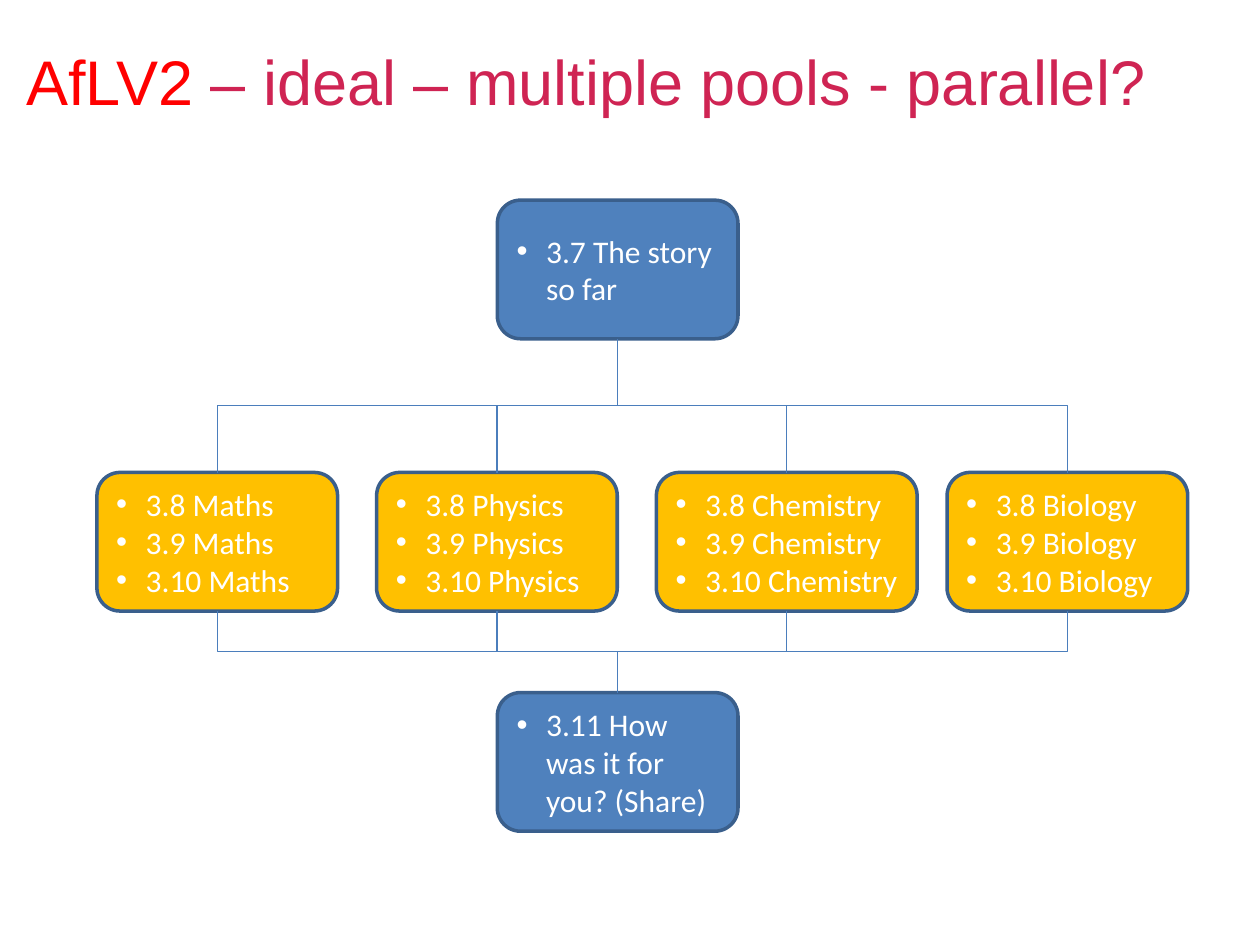
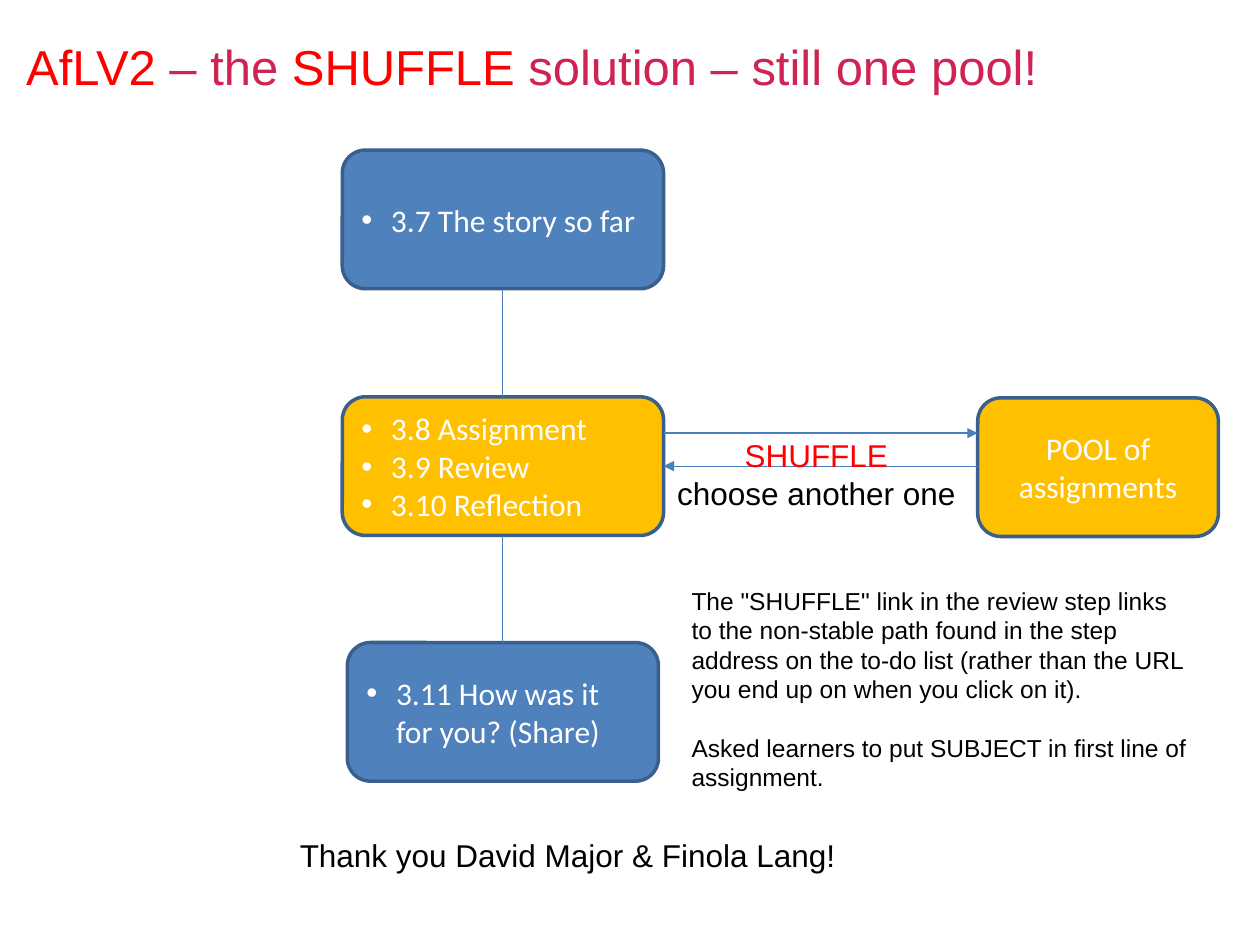
from dataclasses import dataclass
from typing import NamedTuple

from pptx import Presentation
from pptx.dml.color import RGBColor
from pptx.enum.shapes import MSO_CONNECTOR, MSO_SHAPE
from pptx.enum.text import MSO_ANCHOR, PP_ALIGN
from pptx.oxml.ns import qn
from pptx.util import Pt
from lxml.etree import SubElement


# Theme
@dataclass(frozen=True)
class Theme:
    blue: str = "4F81BD"
    gold: str = "FFC000"
    edge: str = "3A5F8C"
    link: str = "4B7EBC"
    red: str = "FF0000"
    rose: str = "CF2453"
    white: str = "FFFFFF"
    black: str = "000000"
    sans: str = "Arial"
    card: str = "Calibri"
    body: int = 18
    note: int = 14
    indent: float = 16.9
    height: float = 79.2
    width: float = 137.5


THEME = Theme()
TOP, BOTTOM = 0, 2  # connection sites of a card


class Run(NamedTuple):
    text: str
    tint: str


class Card(NamedTuple):
    left: float
    top: float
    lines: list[str]
    fill: str
    width: float = THEME.width
    bullet: bool = True


class Label(NamedTuple):
    left: float
    top: float
    width: float
    height: float


def color(code: str) -> RGBColor:
    return RGBColor.from_string(code)


# Text
def write(frame, lines, *, size=THEME.body, font=THEME.sans, tint=THEME.black,
          align=PP_ALIGN.LEFT, bullet=False, gap=0, wrap=True,
          anchor=MSO_ANCHOR.TOP) -> None:
    """Each line is a string or a list of runs."""
    frame.word_wrap = wrap
    frame.vertical_anchor = anchor
    for pos, line in enumerate(lines):
        para = frame.paragraphs[0] if pos == 0 else frame.add_paragraph()
        para.alignment = align
        if pos and gap:
            para.space_before = Pt(gap)
        if bullet:
            props = para._p.get_or_add_pPr()
            props.set("marL", str(Pt(THEME.indent)))
            props.set("indent", str(-Pt(THEME.indent)))
            SubElement(props, qn("a:buFont")).set("typeface", THEME.sans)
            SubElement(props, qn("a:buChar")).set("char", "•")
        for part in [Run(line, tint)] if isinstance(line, str) else line:
            run = para.add_run()
            run.text = part.text
            run.font.size = Pt(size)
            run.font.name = font
            run.font.color.rgb = color(part.tint)


def add_label(slide, spot: Label, lines, **style):
    box = slide.shapes.add_textbox(*map(Pt, spot))
    write(box.text_frame, lines, **style)
    return box


def add_title(slide, spot: Label, runs: list[Run], size: int) -> None:
    box = add_label(slide, spot, [runs], size=size)
    box.text_frame.margin_top = Pt(7)


# Cards
def add_card(slide, card: Card):
    shape = slide.shapes.add_shape(
        MSO_SHAPE.ROUNDED_RECTANGLE, Pt(card.left), Pt(card.top),
        Pt(card.width), Pt(THEME.height))
    shape.shadow.inherit = False
    shape.fill.solid()
    shape.fill.fore_color.rgb = color(card.fill)
    shape.line.color.rgb = color(THEME.edge)
    shape.line.width = Pt(2)
    write(shape.text_frame, card.lines, font=THEME.card, tint=THEME.white,
          align=PP_ALIGN.LEFT if card.bullet else PP_ALIGN.CENTER,
          bullet=card.bullet, anchor=MSO_ANCHOR.MIDDLE)
    return shape


# Links
def add_link(slide, kind, *ends: int, arrow: bool = False):
    link = slide.shapes.add_connector(kind, *ends)
    link.line.color.rgb = color(THEME.link)
    link.line.width = Pt(0.75)
    if arrow:
        SubElement(link.line._get_or_add_ln(), qn("a:tailEnd")).set("type", "triangle")
    SubElement(link._element.spPr, qn("a:effectLst"))
    return link


def add_line(slide, *ends: float, arrow: bool = False) -> None:
    add_link(slide, MSO_CONNECTOR.STRAIGHT, *map(Pt, ends), arrow=arrow)


def add_elbow(slide, upper, lower) -> None:
    """Join two cards with a down, across, down path."""
    link = add_link(slide, MSO_CONNECTOR.ELBOW, 0, 0, 0, 0)
    link.begin_connect(upper, BOTTOM)
    link.end_connect(lower, TOP)
    start, stop = (card.left + card.width // 2 for card in (upper, lower))
    head, foot = upper.top + upper.height, lower.top
    # The path is drawn sideways, then turned about its centre
    link.width, link.height = foot - head, abs(stop - start)
    link.left = (start + stop - link.width) // 2
    link.top = (head + foot - link.height) // 2
    frame = link._element.spPr.find(qn("a:xfrm"))
    right = stop > start
    frame.set("rot", str((270 if right else 90) * 60000))
    frame.set("flipH", "1" if right else "0")
    frame.set("flipV", "0")


# Slide 1: parallel pools
def draw_pools(slide) -> None:
    add_title(slide, Label(7.9, 17.3, 671, 104.4), [
        Run("AfLV2", THEME.red),
        Run(" – ideal – multiple pools - parallel?", THEME.rose)], 36)
    pools = [
        add_card(slide, Card(left, 270, [f"3.{step} {topic}" for step in (8, 9, 10)],
                             THEME.gold, width))
        for topic, left, width in (
            ("Maths", 55.4, THEME.width), ("Physics", 215.2, THEME.width),
            ("Chemistry", 375.1, 149), ("Biology", 541.2, THEME.width))]
    first = add_card(slide, Card(284.2, 114.4, ["3.7 The story so far"], THEME.blue))
    last = add_card(slide, Card(284.2, 395.8, ["3.11 How was it for you? (Share)"],
                                THEME.blue))
    for pool in pools:
        add_elbow(slide, first, pool)
        add_elbow(slide, pool, last)


# Slide 2: one pool with shuffle
def draw_shuffle(slide) -> None:
    add_title(slide, Label(7.9, 13.7, 620.6, 104.4), [
        Run("AfLV2", THEME.red), Run(" – the ", THEME.rose),
        Run("SHUFFLE", THEME.red),
        Run(" solution – still one pool!", THEME.rose)], 28)
    for card in (
        Card(195.6, 226.8, ["3.8 Assignment", "3.9 Review", "3.10 Reflection"],
             THEME.gold, 183.6),
        Card(558.7, 227.4, ["POOL of", "assignments"], THEME.gold, bullet=False),
        Card(195.6, 85.8, ["3.7 The story so far"], THEME.blue, 183.6),
        Card(198.5, 367.2, ["3.11 How was it for you? (Share)"], THEME.blue, 177.8),
    ):
        add_card(slide, card)

    near, far, mid = 379.2, 558.7, 287.3
    add_line(slide, near, 247.5, far, 247.5, arrow=True)
    add_line(slide, far, 266.4, near, 266.4, arrow=True)
    add_line(slide, mid, 165, mid, 226.8)
    add_line(slide, mid, 306, mid, 367.2)

    add_label(slide, Label(379, 245.5, 175, 51),
              [[Run("SHUFFLE", THEME.red)], "choose another one"],
              align=PP_ALIGN.CENTER, wrap=False)
    add_label(slide, Label(164.2, 474, 323.3, 51),
              ["Thank you David Major & Finola Lang!"], wrap=False)
    add_label(slide, Label(388.1, 331.2, 297.4, 126), [
        'The "SHUFFLE" link in the review step links to the non-stable path '
        "found in the step address on the to-do list (rather than the URL "
        "you end up on when you click on it).",
        "Asked learners to put SUBJECT in first line of assignment."],
        size=THEME.note, gap=16.8)


def main() -> None:
    deck = Presentation()
    deck.slide_width, deck.slide_height = Pt(720), Pt(540)
    for draw in (draw_pools, draw_shuffle):
        draw(deck.slides.add_slide(deck.slide_layouts[6]))
    deck.save("out.pptx")


if __name__ == "__main__":
    main()
